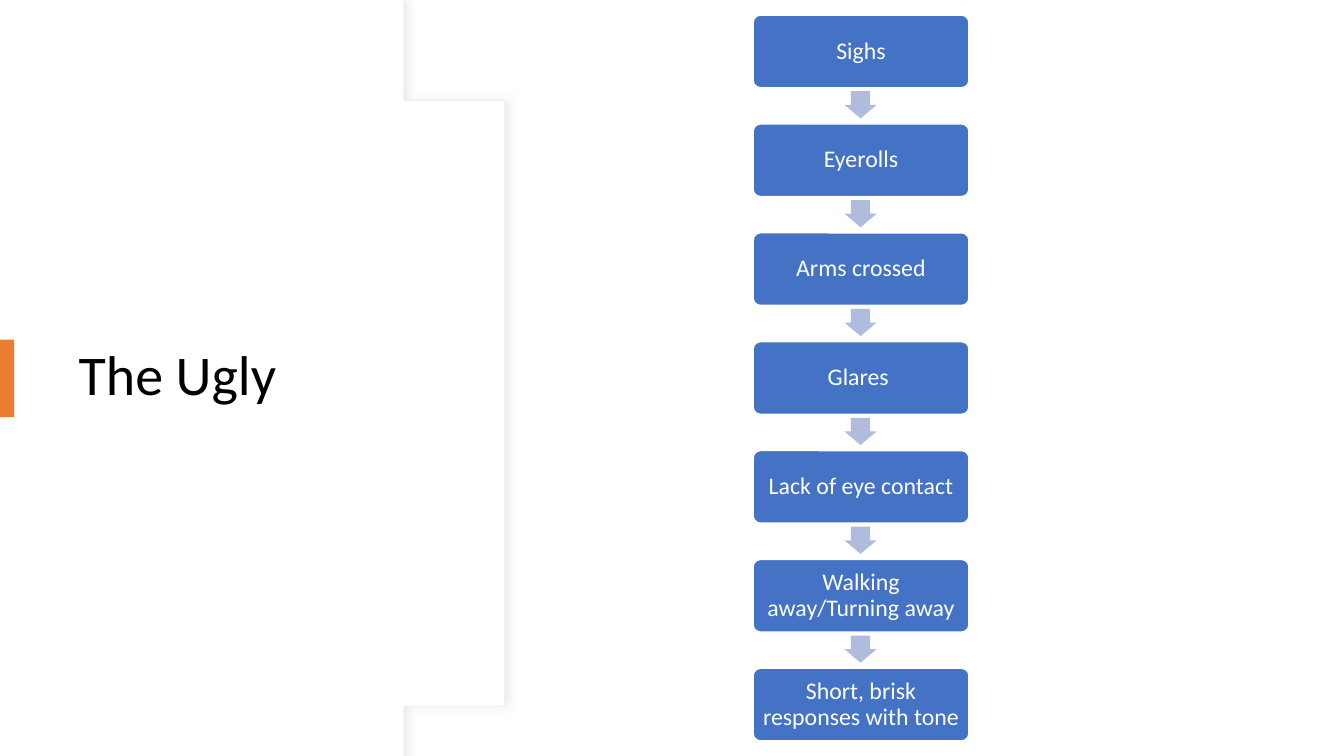
from dataclasses import dataclass

from lxml import etree
from pptx import Presentation
from pptx import util as u
from pptx.dml.color import RGBColor
from pptx.enum import shapes, text
from pptx.oxml import ns

HUES = {
    "white": "FFFFFF",
    "black": "000000",
    "blue": "4472C4",
    "pale": "B0BCDE",
    "orange": "ED7D31",
    "rim": "EFEFEF",
    "shade": "D9D9D9",
}
HIGH = 7.5
PITCH = 1.08
CURVE = 24


@dataclass
class Panel:
    edge: float
    rim: bool


@dataclass
class Block:
    kind: shapes.MSO_SHAPE
    left: float
    top: float
    width: float
    height: float
    fill: str
    turn: float = 0
    line: str = ""


PANELS = [Panel(5.27, True), Panel(5.26, False)]
SIGNS = [
    "Sighs",
    "Eyerolls",
    "Arms crossed",
    "Glares ",
    "Lack of eye contact",
    "Walking away/Turning away",
    "Short, brisk responses with tone",
]


def hue(name: str) -> RGBColor:
    return RGBColor.from_string(HUES[name])


def paint(shape, fill: str, line: str = "", width: float = 1) -> None:
    shape.shadow.inherit = False
    shape.fill.solid()
    shape.fill.fore_color.rgb = hue(fill)
    if line:
        shape.line.color.rgb = hue(line)
        shape.line.width = u.Pt(width)
    else:
        shape.line.fill.background()


def shade(shape) -> None:
    effects = shape.element.spPr.find(ns.qn("a:effectLst"))
    outer = etree.SubElement(
        effects, ns.qn("a:outerShdw"),
        blurRad=str(u.Pt(7)), dist=str(u.Pt(3)), dir="0", algn="l", rotWithShape="0",
    )
    tint = etree.SubElement(outer, ns.qn("a:srgbClr"), val=HUES["shade"])
    etree.SubElement(tint, ns.qn("a:alpha"), val="50000")


def arc(edge: float) -> list[tuple[float, float]]:
    ends = [(edge - 1.26, 0.08), (edge - 0.48, 1.02), (edge, 2.32), (edge, HIGH / 2)]
    upper = [(edge - 1.33, 0.0)]
    for step in range(CURVE + 1):
        t = step / CURVE
        parts = [(1 - t) ** 3, 3 * t * (1 - t) ** 2, 3 * t * t * (1 - t), t ** 3]
        upper.append((
            sum(k * x for k, (x, y) in zip(parts, ends)),
            sum(k * y for k, (x, y) in zip(parts, ends)),
        ))
    lower = [(x, HIGH - y) for x, y in reversed(upper[:-1])]
    return upper + lower + [(0, HIGH)]


def draw_panel(slide, panel: Panel) -> None:
    form = slide.shapes.build_freeform(0, 0, scale=u.Inches(1))
    form.add_line_segments(arc(panel.edge), close=True)
    shape = form.convert_to_shape()
    paint(shape, "white", "rim" if panel.rim else "", 0.75)
    if panel.rim:
        shade(shape)


def draw_block(slide, block: Block):
    box = [u.Inches(n) for n in (block.left, block.top, block.width, block.height)]
    shape = slide.shapes.add_shape(block.kind, *box)
    shape.rotation = block.turn
    paint(shape, block.fill, block.line)
    return shape


def write(frame, words: str, size: float, color: str, align: text.PP_ALIGN) -> None:
    frame.word_wrap = True
    frame.auto_size = text.MSO_AUTO_SIZE.NONE
    frame.vertical_anchor = text.MSO_ANCHOR.MIDDLE
    para = frame.paragraphs[0]
    para.alignment = align
    para.line_spacing = 0.9
    run = para.add_run()
    run.text = words
    run.font.name = "Calibri"
    run.font.size = u.Pt(size)
    run.font.color.rgb = hue(color)


def draw_title(slide) -> None:
    title = slide.shapes.title
    title.left, title.top = u.Inches(0.68), u.Inches(1.27)
    title.width, title.height = u.Inches(3.94), u.Inches(4.95)
    write(title.text_frame, "The Ugly", 40, "black", text.PP_ALIGN.LEFT)
    title.element.getparent().append(title.element)


def draw_sign(slide, words: str, top: float) -> None:
    card = Block(shapes.MSO_SHAPE.ROUNDED_RECTANGLE, 7.47, top, 2.14, 0.72, "blue", line="white")
    shape = draw_block(slide, card)
    shape.adjustments[0] = 0.1
    frame = shape.text_frame
    frame.margin_left = frame.margin_right = u.Inches(0.07)
    frame.margin_top = frame.margin_bottom = u.Inches(0.07)
    write(frame, words, 17, "white", text.PP_ALIGN.CENTER)


def draw_arrow(slide, top: float) -> None:
    arrow = Block(shapes.MSO_SHAPE.RIGHT_ARROW, 8.4, top, 0.27, 0.32, "pale", 90)
    shape = draw_block(slide, arrow)
    shape.adjustments[0] = 0.6
    shape.adjustments[1] = 0.5


def main() -> None:
    deck = Presentation()
    deck.slide_width, deck.slide_height = u.Inches(13.33), u.Inches(HIGH)
    slide = deck.slides.add_slide(deck.slide_layouts[5])
    for panel in PANELS:
        draw_panel(slide, panel)
    draw_title(slide)
    draw_block(slide, Block(shapes.MSO_SHAPE.RECTANGLE, 0, 3.37, 0.14, 0.77, "orange"))
    for rank, words in enumerate(SIGNS):
        top = 0.15 + rank * PITCH
        draw_sign(slide, words, top)
        if rank < len(SIGNS) - 1:
            draw_arrow(slide, top + 0.73)
    deck.save("out.pptx")


if __name__ == "__main__":
    main()
